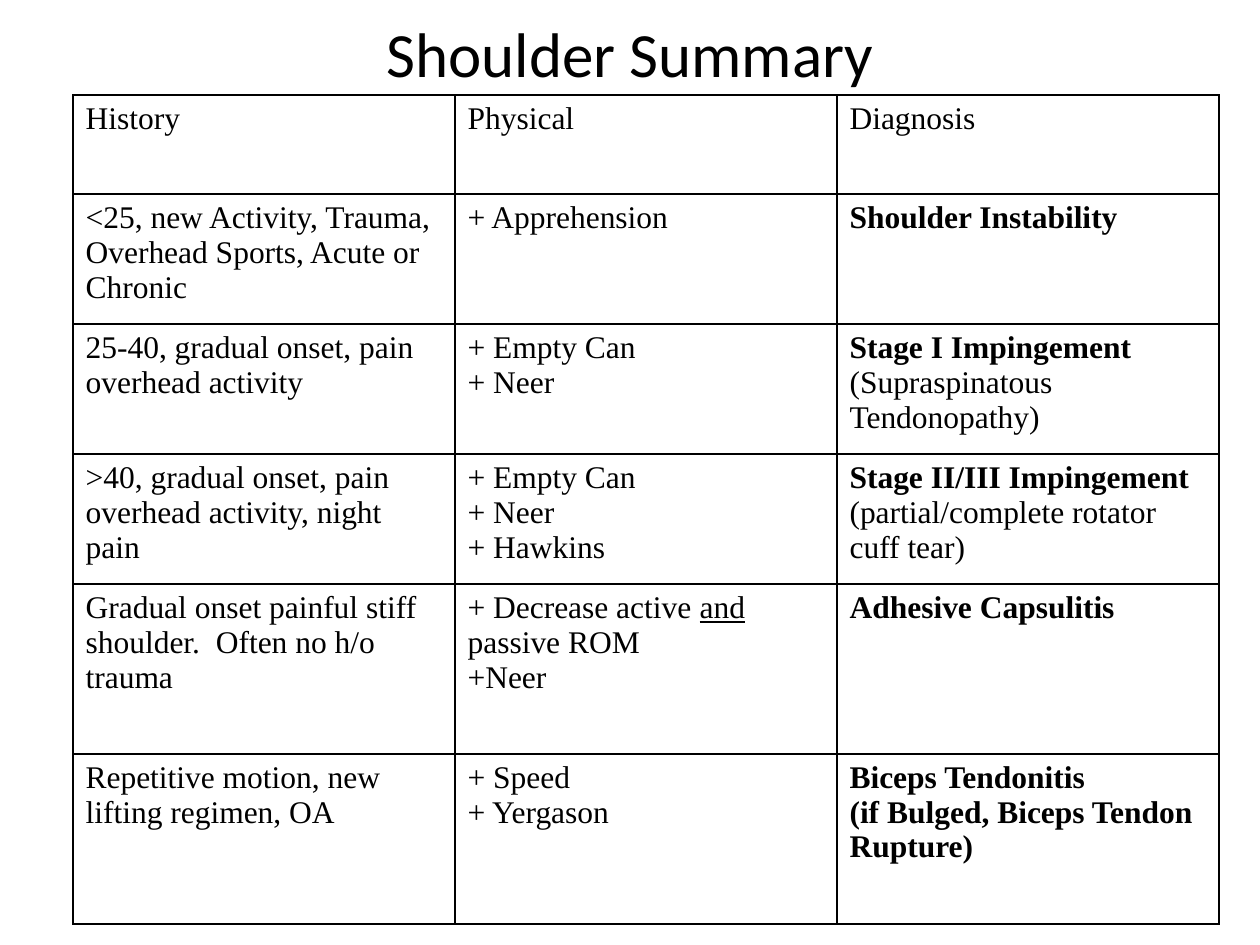
from lxml import etree
from pptx import Presentation
from pptx import util as u
from pptx.dml.color import RGBColor
from pptx.enum import text
from pptx.oxml.ns import qn

PX = 914400 // 126
BLACK = RGBColor(0, 0, 0)
BOLD, UNDERLINE = "bold", "underline"


def format_font(font, name, size):
    font.name = name
    font.size = u.Pt(size)
    font.color.rgb = BLACK


def add_borders(cell):
    tcPr = cell._tc.get_or_add_tcPr()
    for i, side in enumerate(("lnL", "lnR", "lnT", "lnB")):
        ln = etree.Element(qn("a:" + side), w=str(u.Pt(1)))
        fill = etree.SubElement(ln, qn("a:solidFill"))
        etree.SubElement(fill, qn("a:srgbClr"), val=str(BLACK))
        tcPr.insert(i, ln)


prs = Presentation()
prs.slide_width, prs.slide_height = u.Inches(10), u.Inches(7.5)
s = prs.slides.add_slide(prs.slide_layouts[5])

# Title
title = s.shapes.title
title.left, title.top, title.width, title.height = (
    v * PX for v in (63, 10, 1134, 84))
tf = title.text_frame
tf.text = "Shoulder Summary"
tf.vertical_anchor = text.MSO_ANCHOR.MIDDLE
p = tf.paragraphs[0]
p.alignment = text.PP_ALIGN.CENTER
format_font(p.runs[0].font, "Calibri", 36)

# Each cell is a list of paragraphs; a paragraph is a list of (text, style) runs
rows = [
    [[[("History", None)]], [[("Physical", None)]], [[("Diagnosis", None)]]],
    [[[("<25, new Activity, Trauma, Overhead Sports, Acute or Chronic", None)]],
     [[("+ Apprehension", None)]],
     [[("Shoulder Instability", BOLD)]]],
    [[[("25-40, gradual onset, pain overhead activity", None)]],
     [[("+ Empty Can", None)], [("+ Neer", None)]],
     [[("Stage I Impingement", BOLD), (" (Supraspinatous Tendonopathy)", None)]]],
    [[[(">40, gradual onset, pain overhead activity, night pain", None)]],
     [[("+ Empty Can", None)], [("+ Neer", None)], [("+ Hawkins", None)]],
     [[("Stage II/III Impingement", BOLD),
       (" (partial/complete rotator cuff tear)", None)]]],
    [[[("Gradual onset painful stiff shoulder.  Often no h/o trauma", None)]],
     [[("+ Decrease active ", None), ("and", UNDERLINE), (" passive ROM", None)],
      [("+Neer", None)]],
     [[("Adhesive Capsulitis", BOLD)]]],
    [[[("Repetitive motion, new lifting regimen, OA", None)]],
     [[("+ Speed", None)], [("+ Yergason", None)]],
     [[("Biceps Tendonitis", BOLD)],
      [("(if Bulged, Biceps Tendon Rupture)", BOLD)]]],
]
heights = [99, 130, 130, 130, 170, 170]

# Table
table = s.shapes.add_table(len(rows), 3, 73 * PX, 95 * PX,
                           1146 * PX, sum(heights) * PX).table
table.first_row = table.horz_banding = False
for col in table.columns:
    col.width = 382 * PX

for i, (row, height) in enumerate(zip(rows, heights)):
    table.rows[i].height = height * PX
    for j, paragraphs in enumerate(row):
        cell = table.cell(i, j)
        cell.fill.background()
        add_borders(cell)
        tf = cell.text_frame
        for k, runs in enumerate(paragraphs):
            p = tf.add_paragraph() if k else tf.paragraphs[0]
            for words, style in runs:
                r = p.add_run()
                r.text = words
                format_font(r.font, "Times New Roman", 18)
                r.font.bold = style == BOLD
                r.font.underline = style == UNDERLINE

prs.save("out.pptx")
